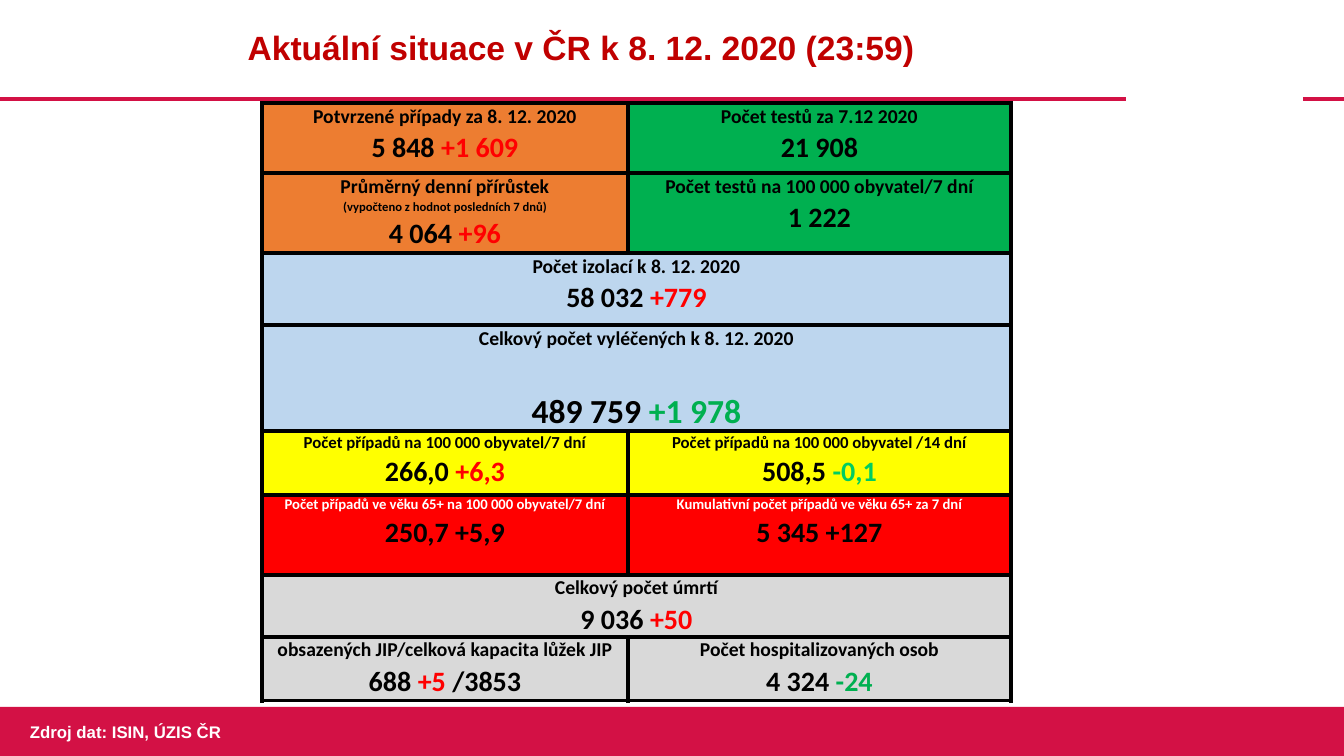
"""Build the slide with the Czech epidemic situation table for 8. 12. 2020."""
from lxml import etree
from pptx import Presentation, util as u
from pptx.dml.color import RGBColor
from pptx.enum import shapes, text
from pptx.oxml.ns import qn

PX = 914400 / 100.8
CRIMSON = RGBColor(0xD3, 0x11, 0x45)
DARK_RED = RGBColor(0xC0, 0x00, 0x00)
BLACK = RGBColor(0x00, 0x00, 0x00)
WHITE = RGBColor(0xFF, 0xFF, 0xFF)
RED = RGBColor(0xFF, 0x00, 0x00)
GREEN = RGBColor(0x00, 0xB0, 0x50)
LIGHT_GREEN = RGBColor(0x00, 0xCD, 0x61)
ORANGE = RGBColor(0xED, 0x7D, 0x31)
BLUE = RGBColor(0xBD, 0xD6, 0xEE)
YELLOW = RGBColor(0xFF, 0xFF, 0x00)
GREY = RGBColor(0xD9, 0xD9, 0xD9)

TITLE = "Aktuální situace v ČR k 8. 12. 2020 (23:59)"
SOURCE = "Zdroj dat: ISIN, ÚZIS ČR"
RULES = [(0, 1126), (1303, 1344)]
RULE_Y = 99
TABLE_LEFT, TABLE_TOP = 262, 103
COLUMNS = [366, 383]


def line(size, *runs, spacing=1.07):
    """Describe one paragraph: its size, its (words, colour) runs and its spacing."""
    return size, runs, spacing


ROWS = [
    (70, [
        (ORANGE, [line(14, ("Potvrzené případy za 8. 12. 2020", BLACK)),
                  line(20, ("5 848 ", BLACK), ("+1 609", RED))]),
        (GREEN, [line(14, ("Počet testů za 7.12 2020", BLACK)),
                 line(20, ("21 908", BLACK))])]),
    (80, [
        (ORANGE, [line(14, ("Průměrný denní přírůstek", BLACK)),
                  line(9, ("(vypočteno z hodnot posledních 7 dnů)", BLACK)),
                  line(20, ("4 064 ", BLACK), ("+96", RED))]),
        (GREEN, [line(14, ("Počet testů na 100 000 obyvatel/7 dní", BLACK)),
                 line(20, ("1 222", BLACK))])]),
    (72, [
        (BLUE, [line(14, ("Počet izolací k 8. 12. 2020", BLACK)),
                line(20, ("58 032 ", BLACK), ("+779", RED))])]),
    (95, [
        (BLUE, [line(14, ("Celkový počet vyléčených k 8. 12. 2020", BLACK)),
                line(24, ("489 759 ", BLACK), ("+1 978", GREEN), spacing=2.0)])]),
    (64, [
        (YELLOW, [line(12, ("Počet případů na 100 000 obyvatel/7 dní", BLACK)),
                  line(20, ("266,0 ", BLACK), ("+6,3", RED))]),
        (YELLOW, [line(12, ("Počet případů na 100 000 obyvatel /14 dní", BLACK)),
                  line(20, ("508,5 ", BLACK), ("-0,1", LIGHT_GREEN))])]),
    (80, [
        (RED, [line(10.5, ("Počet případů ve věku 65+ na 100 000 obyvatel/7 dní", WHITE)),
               line(20, ("250,7 +5,9", BLACK))]),
        (RED, [line(10.5, ("Kumulativní počet případů ve věku 65+ za 7 dní", WHITE)),
               line(20, ("5 345 +127", BLACK))])]),
    (62, [
        (GREY, [line(14, ("Celkový počet úmrtí", BLACK)),
                line(20, ("9 036 ", BLACK), ("+50", RED))])]),
    (64, [
        (GREY, [line(14, ("obsazených JIP/celková kapacita lůžek JIP", BLACK)),
                line(20, ("688 ", BLACK), ("+5 ", RED), ("/3853", BLACK))]),
        (GREY, [line(14, ("Počet hospitalizovaných osob", BLACK)),
                line(20, ("4 324 ", BLACK), ("-24", GREEN))])]),
]


def px(*lengths):
    """Turn px lengths into EMU."""
    return [u.Emu(round(length * PX)) for length in lengths]


def assign(target, values):
    """Set each attribute named in values."""
    for name, value in values.items():
        setattr(target, name, value)


def write(frame, lines, font_name, align):
    """Fill a text frame with bold paragraphs."""
    for index, (size, runs, spacing) in enumerate(lines):
        paragraph = frame.add_paragraph() if index else frame.paragraphs[0]
        assign(paragraph, {"alignment": align, "line_spacing": spacing})
        for words, colour in runs:
            run = paragraph.add_run()
            run.text = words
            assign(run.font, {"name": font_name, "size": u.Pt(size), "bold": True})
            run.font.color.rgb = colour


def add_label(slide, box, content, align, anchor):
    """Add a text box in Arial."""
    frame = slide.shapes.add_textbox(*px(*box)).text_frame
    assign(frame, {"word_wrap": True, "vertical_anchor": anchor})
    write(frame, [content], "Arial", align)


def add_borders(cell):
    """Draw black 3 pt borders around a cell."""
    properties = cell._tc.get_or_add_tcPr()
    for index, side in enumerate(("lnL", "lnR", "lnT", "lnB")):
        border = etree.Element(qn(f"a:{side}"), w=str(u.Pt(3)))
        fill = etree.SubElement(border, qn("a:solidFill"))
        etree.SubElement(fill, qn("a:srgbClr"), val=str(BLACK))
        properties.insert(index, border)


def add_situation(slide):
    """Add the table, merging each row that holds a single cell."""
    heights = [height for height, _ in ROWS]
    table = slide.shapes.add_table(
        len(ROWS), len(COLUMNS),
        *px(TABLE_LEFT, TABLE_TOP, sum(COLUMNS), sum(heights))).table
    assign(table, {"first_row": False, "horz_banding": False})
    for column, width in zip(table.columns, px(*COLUMNS)):
        column.width = width
    for r, (height, cells) in enumerate(ROWS):
        table.rows[r].height = px(height)[0]
        if len(cells) == 1:
            table.cell(r, 0).merge(table.cell(r, 1))
        for c in range(len(COLUMNS)):
            cell = table.cell(r, c)
            fill, lines = cells[min(c, len(cells) - 1)]
            cell.fill.solid()
            cell.fill.fore_color.rgb = fill
            add_borders(cell)
            side, flat = px(4, 0)
            assign(cell, {"margin_left": side, "margin_right": side,
                          "margin_top": flat, "margin_bottom": flat})
            if c < len(cells):
                write(cell.text_frame, lines, "Calibri", text.PP_ALIGN.CENTER)


def main():
    """Compose and save the slide."""
    deck = Presentation()
    deck.slide_width, deck.slide_height = px(1344, 756)
    slide = deck.slides.add_slide(deck.slide_layouts[6])
    for start, end in RULES:
        rule = slide.shapes.add_connector(
            shapes.MSO_CONNECTOR.STRAIGHT, *px(start, RULE_Y, end, RULE_Y))
        rule.line.color.rgb = CRIMSON
        rule.line.width = u.Pt(3)
        etree.SubElement(rule._element.spPr, qn("a:effectLst"))
    footer = slide.shapes.add_shape(shapes.MSO_SHAPE.RECTANGLE, *px(0, 707, 1344, 49))
    footer.shadow.inherit = False
    footer.fill.solid()
    footer.fill.fore_color.rgb = CRIMSON
    footer.line.fill.background()
    add_label(slide, (36, 0, 1090, 99), line(24, (TITLE, DARK_RED), spacing=0.9),
              text.PP_ALIGN.CENTER, text.MSO_ANCHOR.MIDDLE)
    add_label(slide, (20, 717, 226, 30), line(12, (SOURCE, WHITE), spacing=1.0),
              text.PP_ALIGN.LEFT, text.MSO_ANCHOR.TOP)
    add_situation(slide)
    deck.save("out.pptx")


if __name__ == "__main__":
    main()
